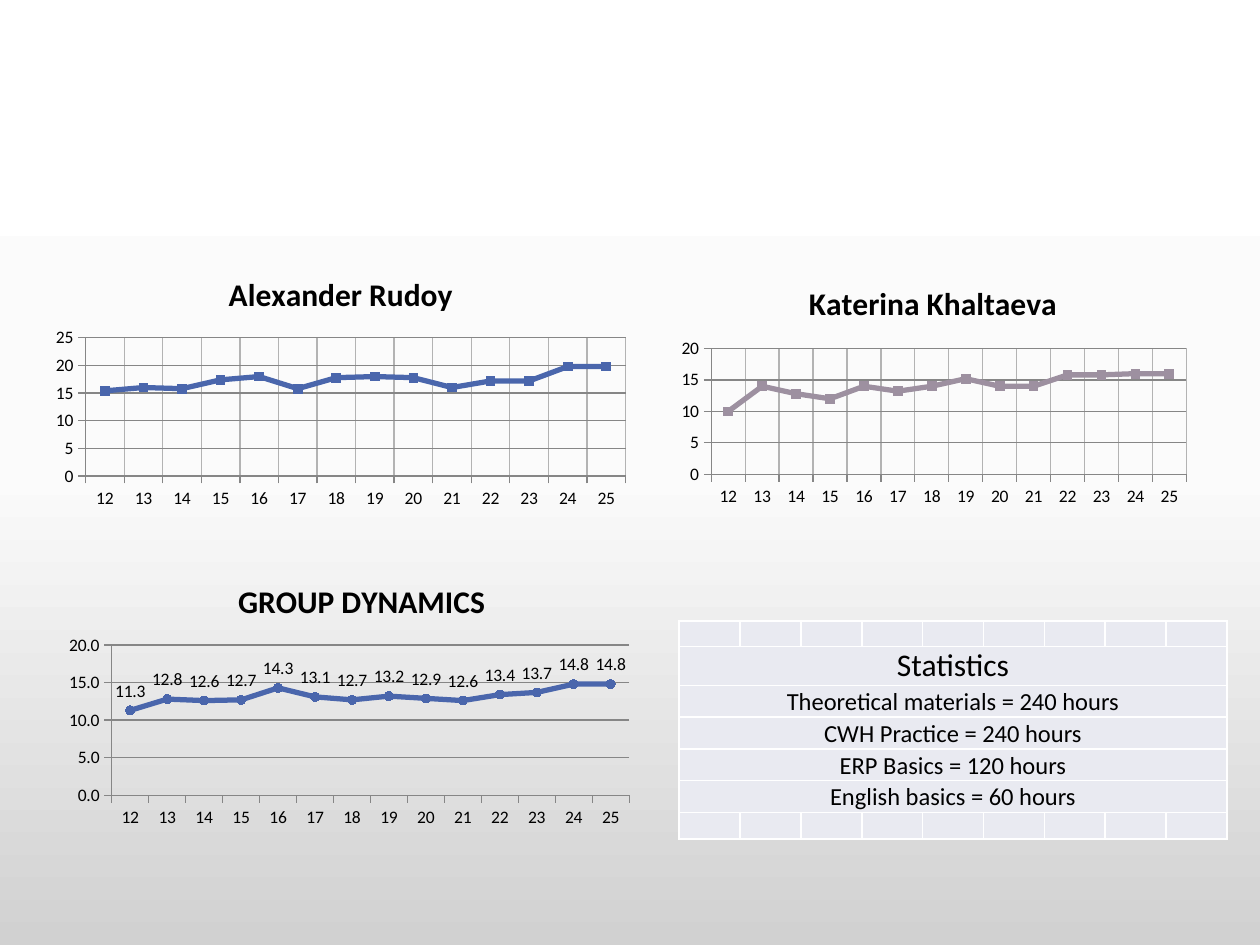
from lxml.etree import SubElement, Element
from pptx import Presentation
from pptx.chart.data import CategoryChartData as ChartData
from pptx.dml.color import RGBColor
from pptx.enum.chart import XL_CHART_TYPE as ChartType, XL_LABEL_POSITION as LabelPosition
from pptx.enum.chart import XL_MARKER_STYLE as Marker, XL_TICK_MARK as Tick
from pptx.enum.text import MSO_ANCHOR as Anchor, PP_ALIGN as Align
from pptx.oxml.ns import qn
from pptx.util import Inches, Pt

COLORS = {
    "text": "000000", "grid": "868686", "light_grid": "B3B3B3",
    "blue": "4A66AC", "mauve": "9D90A0", "cell": "E9EAF1", "border": "FFFFFF",
}
BACKGROUND = [(0, "FFFFFF"), (50, "FBFBFB"), (100, "D1D1D1")]
DAYS = [str(day) for day in range(12, 26)]


class StatisticsSlide:
    """Style and current slide; lengths are cells of a 100 x 75 grid."""

    font = "Calibri"
    columns, rows = 100, 75

    def __init__(self, presentation):
        self.cell_width = presentation.slide_width / self.columns
        self.cell_height = presentation.slide_height / self.rows
        self.slide = presentation.slides.add_slide(presentation.slide_layouts[6])

    def box(self, left, top, width, height):
        return (round(left * self.cell_width), round(top * self.cell_height),
                round(width * self.cell_width), round(height * self.cell_height))

    def color(self, name):
        return RGBColor.from_string(COLORS[name])

    def style_font(self, font, size, bold=False):
        font.name, font.size, font.bold = self.font, Pt(size), bold
        font.color.rgb = self.color("text")

    def style_line(self, line, color, width):
        line.color.rgb = self.color(color)
        line.width = Pt(width)

    def background(self, stops):
        fill = self.slide.background.fill
        fill.gradient()
        fill.gradient_angle = 270
        stop_list = next(self.slide.element.iter(qn("a:gsLst")))
        for old_stop in list(stop_list):
            stop_list.remove(old_stop)
        for position, color in stops:
            stop = SubElement(stop_list, qn("a:gs"), pos=str(position * 1000))
            SubElement(stop, qn("a:srgbClr"), val=color)

    def plot_layout(self, chart, shares):
        """Place the inner plot area by shares of the chart's size."""
        plot_area = next(chart.element.iter(qn("c:plotArea")))
        for old_layout in plot_area.findall(qn("c:layout")):
            plot_area.remove(old_layout)
        layout = Element(qn("c:layout"))
        plot_area.insert(0, layout)
        manual = SubElement(layout, qn("c:manualLayout"))
        settings = [("layoutTarget", "inner"), ("xMode", "edge"), ("yMode", "edge")]
        for tag, value in settings + list(zip("xywh", shares)):
            SubElement(manual, qn(f"c:{tag}"), val=str(value))

    def line_chart(self, box, title, values, color, maximum, plot,
                   marker=Marker.SQUARE, number_format="General",
                   vertical_grid=True, labels=False):
        data = ChartData(number_format=number_format)
        data.categories = DAYS
        data.add_series(title, values)
        chart = self.slide.shapes.add_chart(
            ChartType.LINE_MARKERS, *self.box(*box), data).chart
        self.style_font(chart.font, 10)
        chart.has_legend = False
        self.plot_layout(chart, plot)

        # Title
        chart.has_title = True
        chart.chart_title.include_in_layout = False
        run = chart.chart_title.text_frame.paragraphs[0].add_run()
        run.text = title
        self.style_font(run.font, 18, bold=True)

        # Axes
        for axis in (chart.category_axis, chart.value_axis):
            axis.major_tick_mark, axis.minor_tick_mark = Tick.OUTSIDE, Tick.NONE
            self.style_line(axis.format.line, "grid", 0.75)
        value_axis = chart.value_axis
        value_axis.minimum_scale, value_axis.maximum_scale = 0, maximum
        value_axis.major_unit = 5
        value_axis.tick_labels.number_format = number_format
        value_axis.tick_labels.number_format_is_linked = False
        self.style_line(value_axis.major_gridlines.format.line, "grid", 0.75)
        chart.category_axis.has_major_gridlines = vertical_grid
        if vertical_grid:
            grid = chart.category_axis.major_gridlines
            self.style_line(grid.format.line, "light_grid", 0.75)

        # Series
        plot_group = chart.plots[0]
        plot_group.vary_by_categories = False
        series = plot_group.series[0]
        series.smooth = False
        self.style_line(series.format.line, color, 3)
        series.marker.style, series.marker.size = marker, 5
        series.marker.format.fill.solid()
        series.marker.format.fill.fore_color.rgb = self.color(color)
        self.style_line(series.marker.format.line, color, 0.75)
        if labels:
            data_labels = series.data_labels
            data_labels.show_value = True
            data_labels.position = LabelPosition.ABOVE
            data_labels.number_format = number_format
            data_labels.number_format_is_linked = False
            self.style_font(data_labels.font, 10)

    def style_cell(self, cell):
        cell.margin_left = cell.margin_right = cell.margin_top = cell.margin_bottom = 0
        cell.vertical_anchor = Anchor.BOTTOM
        properties = cell._tc.get_or_add_tcPr()
        for side in "LRTB":
            line = SubElement(properties, qn(f"a:ln{side}"), w=str(Pt(1)))
            fill = SubElement(line, qn("a:solidFill"))
            SubElement(fill, qn("a:srgbClr"), val=COLORS["border"])
        cell.fill.solid()
        cell.fill.fore_color.rgb = self.color("cell")
        # Small end mark, so that empty rows stay low
        paragraph = cell.text_frame.paragraphs[0]
        SubElement(paragraph._p, qn("a:endParaRPr"), sz="1000")

    def table(self, box, column_count, lines):
        """Each line is (text, size, row height); its text spans the row."""
        table = self.slide.shapes.add_table(
            len(lines), column_count, *self.box(*box)).table
        table.first_row = table.horz_banding = False
        for cell in table.iter_cells():
            self.style_cell(cell)
        for index, (text, size, height) in enumerate(lines):
            table.rows[index].height = round(height * self.cell_height)
            if not text:
                continue
            cell = table.cell(index, 0)
            cell.merge(table.cell(index, column_count - 1))
            paragraph = cell.text_frame.paragraphs[0]
            paragraph.alignment = Align.CENTER
            run = paragraph.add_run()
            run.text = text
            self.style_font(run.font, size)


def main():
    presentation = Presentation()
    presentation.slide_width, presentation.slide_height = Inches(10), Inches(7.5)
    page = StatisticsSlide(presentation)
    page.background(BACKGROUND)

    # Personal results
    page.line_chart(
        (3.5, 20.2, 47.1, 20.7), "Alexander Rudoy",
        [15.4, 16, 15.8, 17.4, 18, 15.8, 17.8, 18, 17.8, 16, 17.2, 17.2, 19.8, 19.8],
        "blue", 25, (0.07, 0.32, 0.91, 0.53))
    page.line_chart(
        (53.1, 21, 41.9, 19.6), "Katerina Khaltaeva",
        [10, 14, 12.8, 12, 14, 13.2, 14, 15.2, 14, 14, 15.8, 15.8, 16, 16],
        "mauve", 20, (0.08, 0.34, 0.9, 0.51))

    # Group result
    page.line_chart(
        (5.1, 44.6, 47.2, 21.3), "GROUP DYNAMICS",
        [11.3, 12.8, 12.6, 12.7, 14.3, 13.1, 12.7, 13.2, 12.9, 12.6, 13.4, 13.7, 14.8, 14.8],
        "blue", 20, (0.08, 0.31, 0.87, 0.56), marker=Marker.CIRCLE,
        number_format="0.0", vertical_grid=False, labels=True)

    # Hours table
    subjects = ["Theoretical materials = 240 hours", "CWH Practice = 240 hours",
                "ERP Basics = 120 hours", "English basics = 60 hours"]
    lines = [("", 10, 2), ("Statistics", 18, 3.1)]
    lines += [(subject, 14, 2.52) for subject in subjects]
    lines += [("", 10, 2.1)]
    page.table((53.9, 49.3, 43.5, 17.3), 9, lines)

    presentation.save("out.pptx")


if __name__ == "__main__":
    main()
